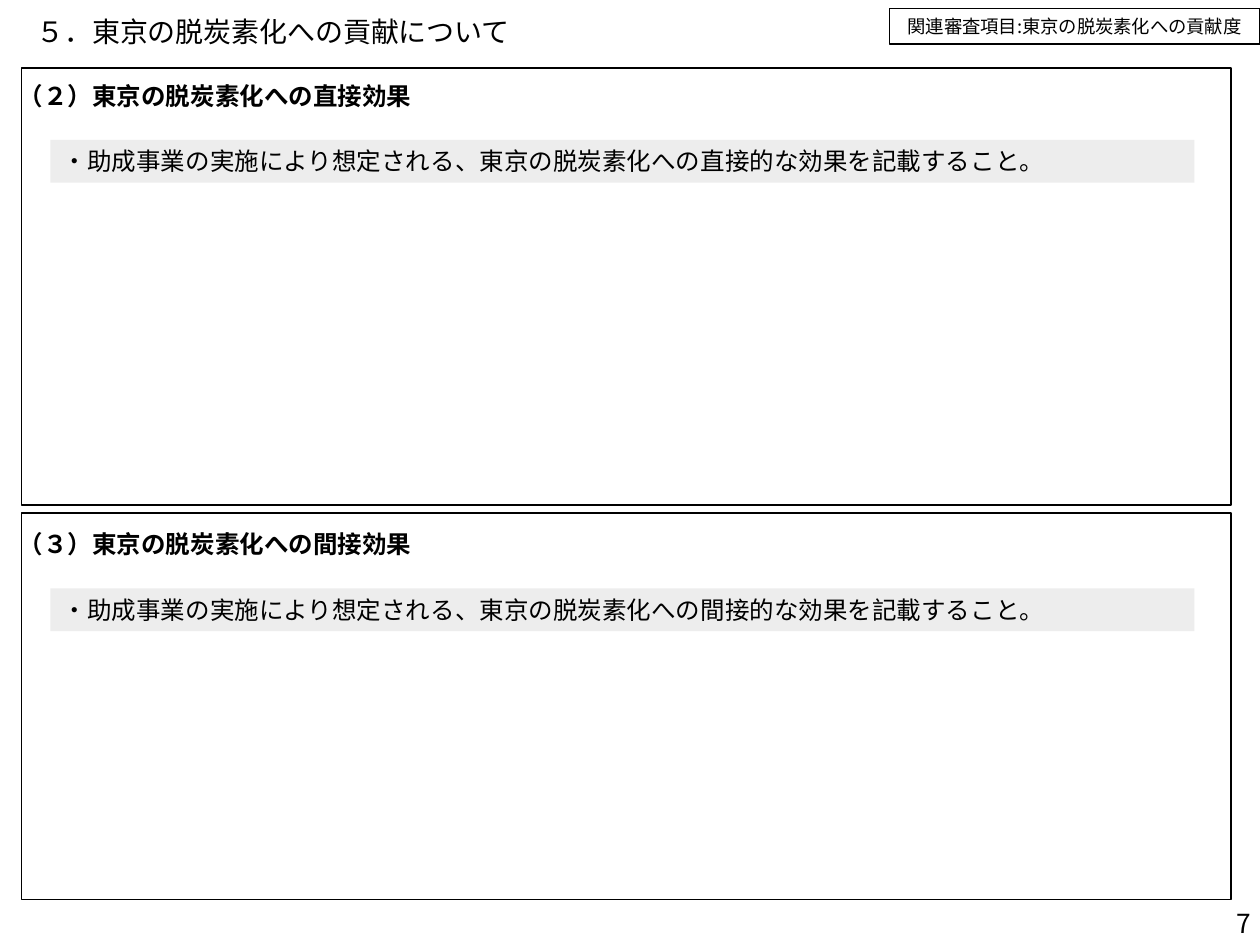
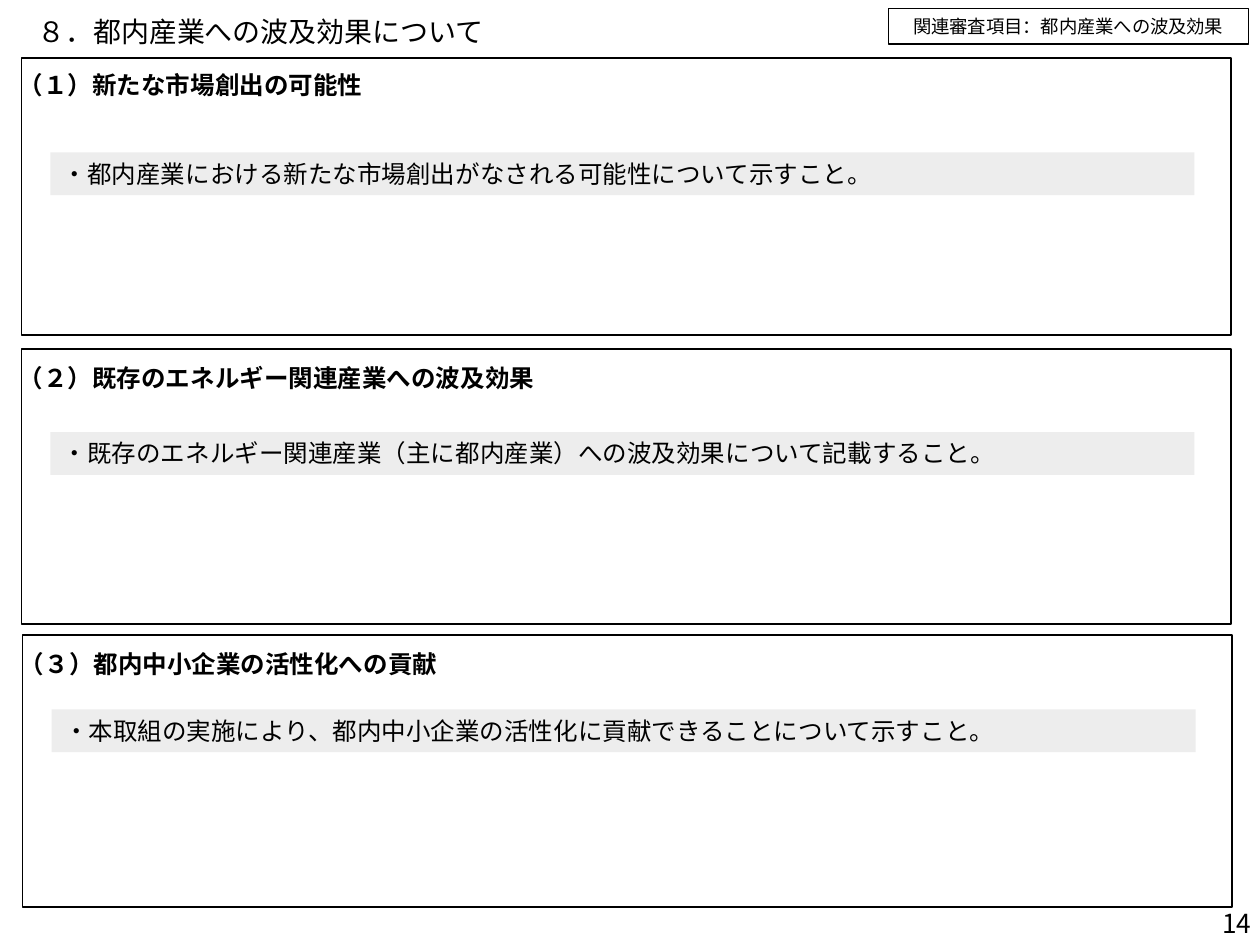
"""Build two proposal form slides with framed sections and guidance bars."""
from dataclasses import dataclass
from typing import Optional

from lxml.etree import SubElement
from pptx import Presentation
from pptx.dml.color import RGBColor
from pptx.enum.shapes import MSO_SHAPE
from pptx.enum.text import MSO_ANCHOR, MSO_AUTO_SIZE, PP_ALIGN
from pptx.oxml.ns import qn
from pptx.shapes.autoshape import Shape
from pptx.slide import Slide
from pptx.util import Inches, Pt

COLORS = {"ink": "000000", "guidance": "EDEDED"}
FONT = "Noto Sans CJK JP"


@dataclass(frozen=True)
class Area:
    left: float
    top: float
    width: float
    height: float

    def lengths(self) -> list[Inches]:
        return [Inches(value) for value in (self.left, self.top, self.width, self.height)]


@dataclass(frozen=True)
class TextStyle:
    size: float
    bold: bool = False
    align: PP_ALIGN = PP_ALIGN.LEFT
    anchor: MSO_ANCHOR = MSO_ANCHOR.TOP
    grow: bool = True
    line_spacing: Optional[float] = None


@dataclass(frozen=True)
class Section:
    heading: str
    guidance: str
    top: float
    height: float
    heading_top: float
    guidance_top: float
    shift: float = 0


@dataclass(frozen=True)
class FormPage:
    title: str
    title_area: Area
    criterion: str
    criterion_area: Area
    number: int
    sections: tuple[Section, ...]


TITLE = TextStyle(16, anchor=MSO_ANCHOR.MIDDLE, grow=False, line_spacing=0.9)
HEADING = TextStyle(14, bold=True)
GUIDANCE = TextStyle(14)
CRITERION = TextStyle(10.5, align=PP_ALIGN.CENTER)
NUMBER = TextStyle(15, align=PP_ALIGN.RIGHT, anchor=MSO_ANCHOR.MIDDLE, grow=False)

PAGES = (
    FormPage(
        "５．東京の脱炭素化への貢献について", Area(0.19, 0.08, 6.68, 0.37),
        "関連審査項目:東京の脱炭素化への貢献度", Area(7.06, 0.07, 2.94, 0.28), 7,
        (
            Section("（２）東京の脱炭素化への直接効果",
                    "・助成事業の実施により想定される、東京の脱炭素化への直接的な効果を記載すること。",
                    0.54, 3.47, 0.59, 1.11),
            Section("（３）東京の脱炭素化への間接効果",
                    "・助成事業の実施により想定される、東京の脱炭素化への間接的な効果を記載すること。",
                    4.07, 3.07, 4.15, 4.67),
        ),
    ),
    FormPage(
        "８．都内産業への波及効果について", Area(0.2, 0.08, 9.44, 0.37),
        "関連審査項目：都内産業への波及効果", Area(7.05, 0.07, 2.86, 0.28), 14,
        (
            Section("（１）新たな市場創出の可能性",
                    "・都内産業における新たな市場創出がなされる可能性について示すこと。",
                    0.46, 2.2, 0.51, 1.21),
            Section("（２）既存のエネルギー関連産業への波及効果",
                    "・既存のエネルギー関連産業（主に都内産業）への波及効果について記載すること。",
                    2.77, 2.18, 2.83, 3.43),
            Section("（３）都内中小企業の活性化への貢献",
                    "・本取組の実施により、都内中小企業の活性化に貢献できることについて示すこと。",
                    5.04, 2.16, 5.1, 5.63, shift=0.01),
        ),
    ),
)


def write_text(box: Shape, text: str, style: TextStyle) -> None:
    frame = box.text_frame
    frame.word_wrap = True
    frame.vertical_anchor = style.anchor
    frame.auto_size = MSO_AUTO_SIZE.SHAPE_TO_FIT_TEXT if style.grow else MSO_AUTO_SIZE.NONE
    para = frame.paragraphs[0]
    para.alignment = style.align
    para.line_spacing = style.line_spacing
    span = para.add_run()
    span.text = text
    span.font.size = Pt(style.size)
    span.font.bold = style.bold
    span.font.color.rgb = RGBColor.from_string(COLORS["ink"])
    span.font.name = FONT
    SubElement(span.font._element, qn("a:ea"), typeface=FONT)


def add_label(page: Slide, area: Area, text: str, style: TextStyle) -> Shape:
    box = page.shapes.add_textbox(*area.lengths())
    write_text(box, text, style)
    return box


def add_rectangle(page: Slide, area: Area, fill: Optional[str] = None,
                  line_width: float = 0) -> Shape:
    box = page.shapes.add_shape(MSO_SHAPE.RECTANGLE, *area.lengths())
    box.shadow.inherit = False
    if fill:
        box.fill.solid()
        box.fill.fore_color.rgb = RGBColor.from_string(COLORS[fill])
    else:
        box.fill.background()
    if line_width:
        box.line.width = Pt(line_width)
        box.line.color.rgb = RGBColor.from_string(COLORS["ink"])
    else:
        box.line.fill.background()
    return box


def add_section(page: Slide, section: Section) -> None:
    shift = section.shift
    add_rectangle(page, Area(0.17 + shift, section.top, 9.6, section.height), line_width=1)
    add_label(page, Area(0.05 + shift, section.heading_top, 6.31, 0.35), section.heading, HEADING)
    bar = add_rectangle(page, Area(0.4 + shift, section.guidance_top, 9.08, 0.34), "guidance")
    write_text(bar, section.guidance, GUIDANCE)


def add_page_number(page: Slide, number: int) -> None:
    box = add_label(page, Area(8.25, 7.25, 1.75, 0.15), str(number), NUMBER)
    frame = box.text_frame
    frame.margin_left = frame.margin_right = Inches(0.07)
    frame.margin_top = frame.margin_bottom = Inches(0.04)


def main() -> None:
    deck = Presentation()
    deck.slide_width, deck.slide_height = Inches(10), Inches(7.5)
    for form in PAGES:
        page = deck.slides.add_slide(deck.slide_layouts[6])
        add_label(page, form.title_area, form.title, TITLE)
        for section in form.sections:
            add_section(page, section)
        criterion = add_rectangle(page, form.criterion_area, line_width=0.75)
        write_text(criterion, form.criterion, CRITERION)
        add_page_number(page, form.number)
    deck.save("out.pptx")


if __name__ == "__main__":
    main()
